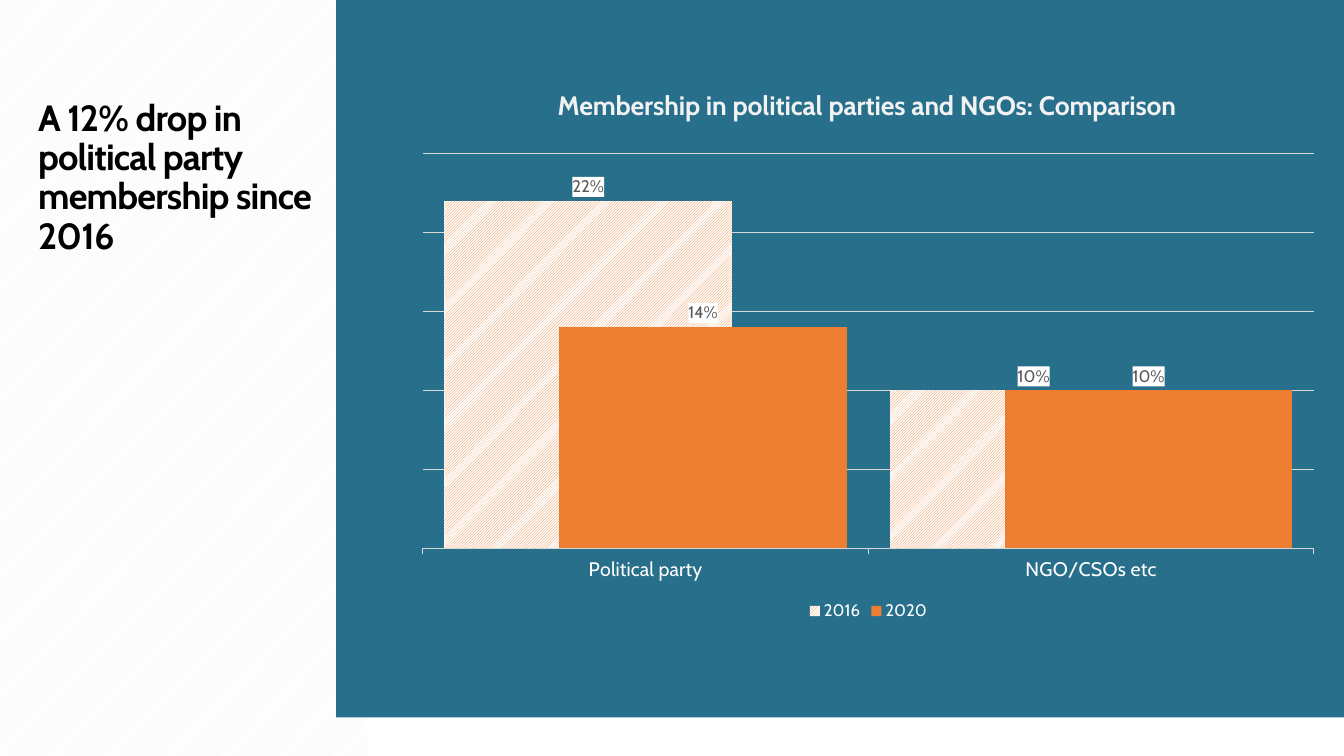
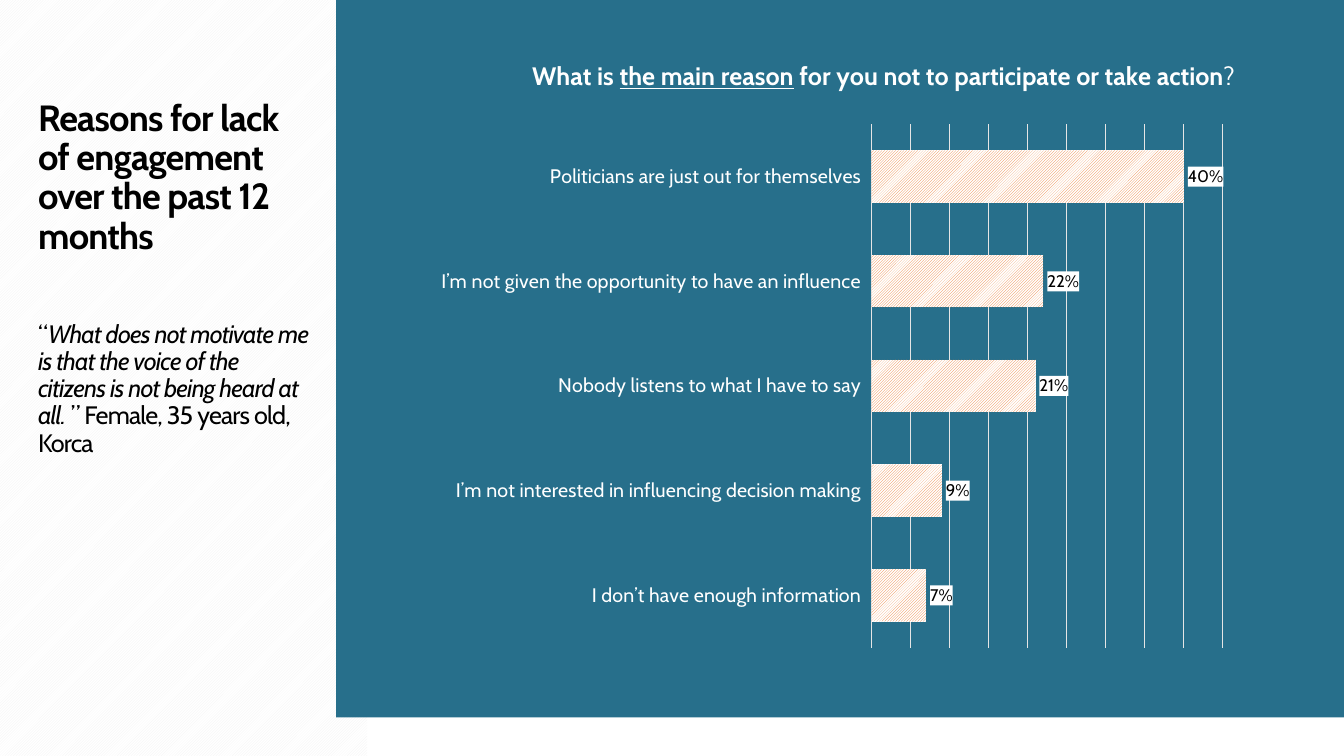
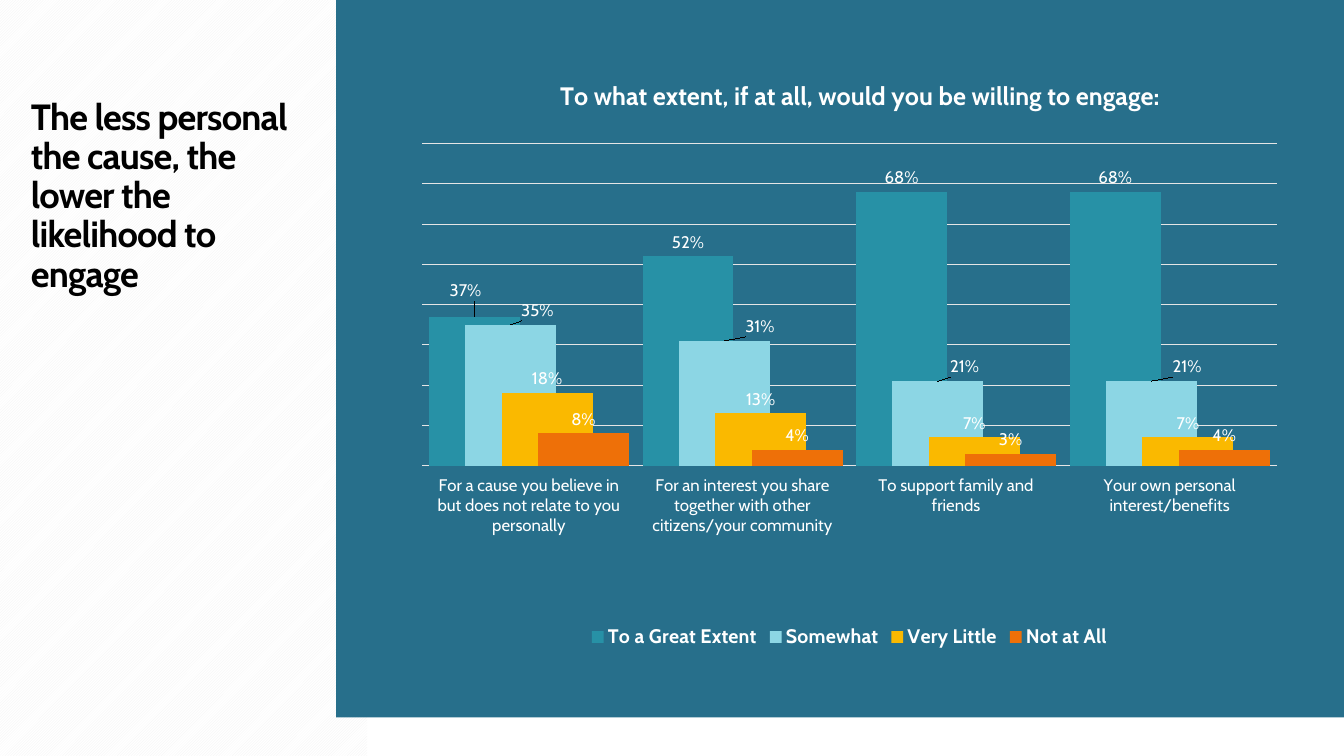
"""Build three slides on civic engagement, each a heading beside a chart."""
from lxml.etree import SubElement
from pptx import Presentation
from pptx.chart.data import CategoryChartData
from pptx.dml.color import RGBColor
from pptx.enum.chart import XL_CHART_TYPE, XL_LABEL_POSITION, XL_LEGEND_POSITION, XL_TICK_LABEL_POSITION, XL_TICK_MARK
from pptx.enum.dml import MSO_PATTERN
from pptx.enum.shapes import MSO_SHAPE
from pptx.oxml import parse_xml
from pptx.oxml.ns import nsdecls, qn
from pptx.util import Cm, Pt

FONT = "Cabin"
WHITE, BLACK, PALE, TEAL, ORANGE = "FFFFFF", "000000", "F2F2F2", "276F8B", "ED7D31"
HATCH = "hatch"
hue = RGBColor.from_string


def write(para, text, size=26, color=BLACK, bold=False, italic=False, under=False, space=None):
    """Add a run of text in the given format."""
    run = para.add_run()
    run.text = text
    font = run.font
    font.name, font.size, font.color.rgb = FONT, Pt(size), hue(color)
    font.bold, font.italic, font.underline = bold, italic, under
    if space:
        run._r.get_or_add_rPr().set("spc", str(space))


def place(spot, **parts):
    """Put a manual chart layout in front of an element."""
    for old in spot.getparent().findall(qn("c:layout")):
        old.getparent().remove(old)
    layout = parse_xml(f"<c:layout {nsdecls('c')}/>")
    manual = SubElement(layout, qn("c:manualLayout"))
    for tag, value in parts.items():
        SubElement(manual, qn("c:" + tag)).set("val", str(value))
    spot.addprevious(layout)


pages = [
    dict(
        head=(0.71, 2.39, 7.7, 9.27),
        text="A 12% drop in political party membership since 2016",
        quote=[],
        chart=(10.19, 1.93, 23.39, 13.82),
        kind=XL_CHART_TYPE.COLUMN_CLUSTERED,
        title=[("Membership in political parties and NGOs: Comparison", dict(size=19, color=PALE, bold=True))],
        left=0.16,
        plot=(0.02, 0.14, 0.96, 0.72),
        cats=["Political party", "NGO/CSOs etc"],
        series=[("2016", [0.22, 0.1], HATCH), ("2020", [0.14, 0.1], ORANGE)],
        top=0.25, step=0.05, gap=15, lap=60,
        line="D9D9D9", tick=XL_TICK_MARK.OUTSIDE, size=14,
        label="595959", back=True, legend=(12, False), shifts=[],
    ),
    dict(
        head=(0.71, 2.39, 7.36, 13.23),
        text="Reasons for lack of engagement over the past 12 months",
        quote=[
            ("“", False),
            ("What does not motivate me is that the voice of the citizens is not being heard at all.", True),
            (" ” Female, 35 years old, Korca", False),
        ],
        chart=(9.02, 1.27, 22.71, 15.52),
        kind=XL_CHART_TYPE.BAR_CLUSTERED,
        title=[
            ("What is ", dict(bold=True)),
            ("the main reason", dict(bold=True, under=True)),
            (" for you not to participate or take action", dict(bold=True)),
            ("?", {}),
        ],
        left=0.19,
        plot=(0.57, 0.12, 0.39, 0.85),
        cats=[
            "Politicians are just out for themselves",
            "I’m not given the opportunity to have an influence",
            "Nobody listens to what I have to say",
            "I’m not interested in influencing decision making",
            "I don’t have enough information",
        ],
        series=[("Series 1", [0.4, 0.22, 0.21, 0.09, 0.07], HATCH)],
        top=0.45, step=0.05, gap=100, lap=0,
        line="E5E5E5", tick=XL_TICK_MARK.NONE, size=14,
        label=BLACK, back=True, legend=None, shifts=[],
    ),
    dict(
        head=(0.53, 2.36, 7.52, 9.27),
        text="The less personal the cause, the lower the likelihood to engage",
        quote=[],
        chart=(10.19, 1.7, 22.43, 14.76),
        kind=XL_CHART_TYPE.COLUMN_CLUSTERED,
        title=[("To what extent, if at all, would you be willing to engage:", dict(bold=True))],
        left=0.17,
        plot=(0.02, 0.13, 0.96, 0.55),
        cats=[
            "For a cause you believe in but does not relate to you personally",
            "For an interest you share together with other citizens/your community",
            "To support family and friends",
            "Your own personal interest/benefits",
        ],
        series=[
            ("To a Great Extent", [0.37, 0.52, 0.68, 0.68], "2791A6"),
            ("Somewhat", [0.35, 0.31, 0.21, 0.21], "8CD6E4"),
            ("Very Little", [0.18, 0.13, 0.07, 0.07], "FAB900"),
            ("Not at All", [0.08, 0.04, 0.03, 0.04], "EE7008"),
        ],
        top=0.8, step=0.1, gap=15, lap=60,
        line="E5E5E5", tick=XL_TICK_MARK.NONE, size=12,
        label=WHITE, back=False, legend=(14, True),
        shifts=[(0, 0, -0.01, -0.02), (1, 0, 0.03, 0), (1, 1, 0.04, 0), (1, 2, 0.03, 0), (1, 3, 0.04, 0)],
    ),
]

deck = Presentation()
deck.slide_width, deck.slide_height = Cm(33.87), Cm(19.05)

for page in pages:
    slide = deck.slides.add_slide(deck.slide_layouts[6])
    shapes = slide.shapes

    band = shapes.add_shape(MSO_SHAPE.RECTANGLE, 0, 0, Cm(9.25), deck.slide_height)
    band.fill.patterned()
    band.fill.pattern = MSO_PATTERN.DARK_UPWARD_DIAGONAL
    band.fill.fore_color.rgb, band.fill.back_color.rgb = hue(PALE), hue(WHITE)
    panel = shapes.add_shape(MSO_SHAPE.RECTANGLE, Cm(8.47), 0, Cm(25.4), Cm(18.08))
    panel.fill.solid()
    panel.fill.fore_color.rgb = hue(TEAL)
    for shape in (band, panel):
        shape.line.fill.background()
        shape.shadow.inherit = False

    frame = shapes.add_textbox(*map(Cm, page["head"])).text_frame
    frame.word_wrap = True
    para = frame.paragraphs[0]
    para.line_spacing = 0.9
    write(para, page["text"], bold=True, space=-60)
    if page["quote"]:
        para = frame.add_paragraph()
        para.line_spacing, para.space_before = 0.9, Pt(46)
        for text, italic in page["quote"]:
            write(para, text, size=18, italic=italic, space=-60)

    data = CategoryChartData(number_format="0%")
    data.categories = page["cats"]
    for name, values, color in page["series"]:
        data.add_series(name, values)
    chart = shapes.add_chart(page["kind"], *map(Cm, page["chart"]), data).chart
    root = chart.element
    fonts = [(chart.font, 12, WHITE, False)]

    chart.has_title = True
    para = chart.chart_title.text_frame.paragraphs[0]
    for text, form in page["title"]:
        write(para, text, **{"size": 18, "color": WHITE, **form})
    place(root.xpath("c:chart/c:title/c:overlay")[0], xMode="edge", yMode="edge", x=page["left"], y=0.01)
    x, y, w, h = page["plot"]
    place(root.xpath(".//c:barChart")[0], layoutTarget="inner", xMode="edge", yMode="edge", x=x, y=y, w=w, h=h)

    chart.has_legend = page["legend"] is not None
    if chart.has_legend:
        size, bold = page["legend"]
        chart.legend.position = XL_LEGEND_POSITION.BOTTOM
        chart.legend.include_in_layout = False
        fonts.append((chart.legend.font, size, WHITE, bold))

    cat, val = chart.category_axis, chart.value_axis
    cat.major_tick_mark = page["tick"]
    cat.tick_label_position = XL_TICK_LABEL_POSITION.LOW
    cat.reverse_order = page["kind"] == XL_CHART_TYPE.BAR_CLUSTERED
    fonts.append((cat.tick_labels.font, page["size"], WHITE, False))
    val.visible = False
    val.has_major_gridlines = True
    val.minimum_scale, val.maximum_scale, val.major_unit = 0, page["top"], page["step"]
    for line in (cat.format.line, val.major_gridlines.format.line):
        line.color.rgb, line.width = hue(page["line"]), Pt(0.75)

    plot = chart.plots[0]
    plot.vary_by_categories = False
    plot.gap_width, plot.overlap = page["gap"], page["lap"]
    for series, (name, values, color) in zip(plot.series, page["series"]):
        fill = series.format.fill
        if color == HATCH:
            fill.patterned()
            fill.pattern = MSO_PATTERN.LIGHT_UPWARD_DIAGONAL
            fill.fore_color.rgb, fill.back_color.rgb = hue(ORANGE), hue(WHITE)
        else:
            fill.solid()
            fill.fore_color.rgb = hue(color)
        labels = series.data_labels
        labels.show_value = True
        labels.number_format, labels.number_format_is_linked = "0%", False
        labels.position = XL_LABEL_POSITION.OUTSIDE_END
        fonts.append((labels.font, 12, page["label"], False))

    for row, col, x, y in page["shifts"]:
        label = plot.series[row].points[col].data_label
        label.position = XL_LABEL_POSITION.OUTSIDE_END
        fonts.append((label.font, 12, page["label"], False))
        mark = root.xpath(f".//c:ser[{row + 1}]/c:dLbls/c:dLbl/c:idx[@val='{col}']")[0]
        place(mark.getnext(), x=x, y=y)

    for font, size, color, bold in fonts:
        font.name, font.size, font.bold = FONT, Pt(size), bold
        font.color.rgb = hue(color)

    if page["back"]:
        for body in root.xpath(".//c:ser/c:dLbls/c:txPr"):
            body.addprevious(parse_xml(
                f"<c:spPr {nsdecls('c', 'a')}><a:solidFill><a:srgbClr val='{WHITE}'/></a:solidFill></c:spPr>"))

deck.save("out.pptx")
